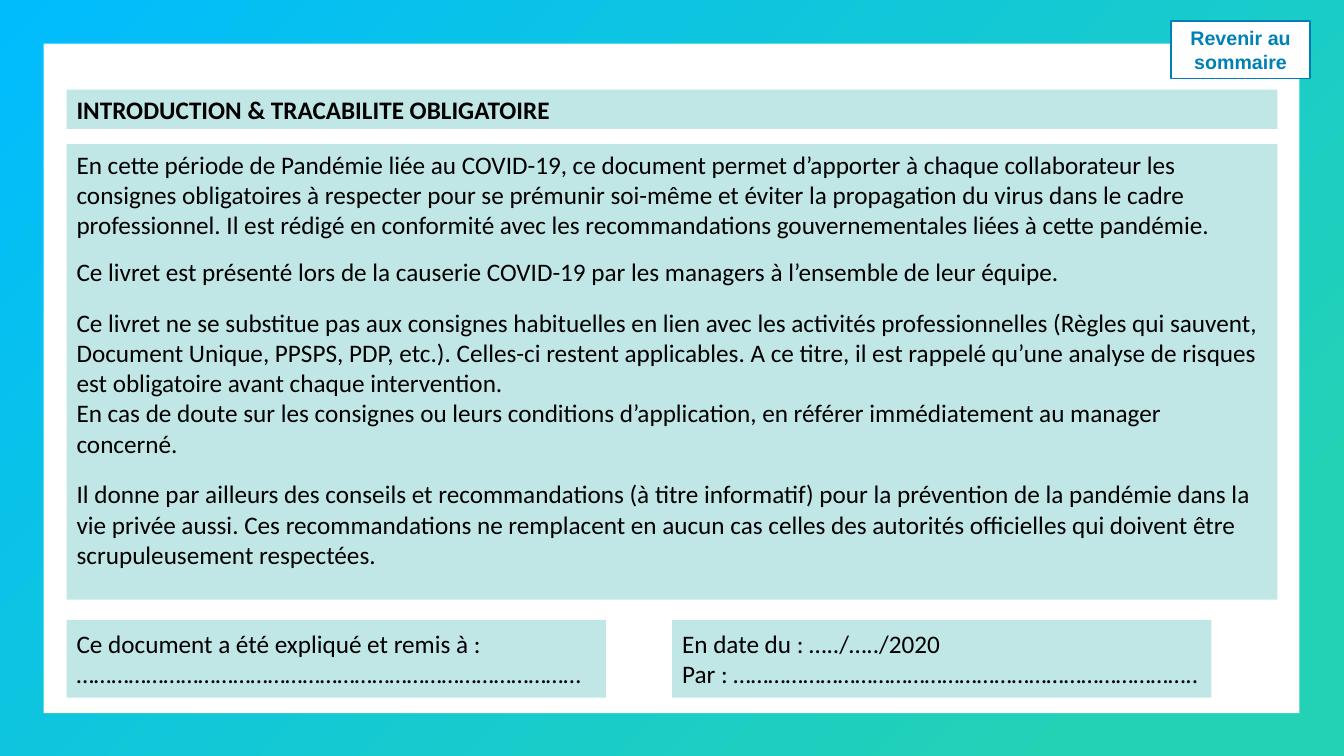
from pptx import Presentation
from pptx.dml.color import RGBColor
from pptx.enum.shapes import MSO_SHAPE
from pptx.enum.text import MSO_ANCHOR, PP_ALIGN
from pptx.oxml import parse_xml
from pptx.oxml.ns import nsdecls, qn
from pptx.util import Cm, Pt

WHITE = RGBColor(0xFF, 0xFF, 0xFF)
BLACK = RGBColor(0x00, 0x00, 0x00)
GREEN = RGBColor(0x23, 0xD2, 0xB5)
SKY = RGBColor(0x00, 0xBC, 0xFD)
PALE = RGBColor(0xC0, 0xE7, 0xE6)
BORDER = RGBColor(0x00, 0x7F, 0xB2)
LINK = RGBColor(0x00, 0x81, 0xB4)

WIDTH, HEIGHT = 33.87, 19.05
LEFT, FULL, HALF = 1.68, 30.51, 13.59

# Each paragraph with the space before it, in points
BODY = [
    ("En cette période de Pandémie liée au COVID-19, ce document permet d’apporter à chaque "
     "collaborateur les consignes obligatoires à respecter pour se prémunir soi-même et éviter "
     "la propagation du virus dans le cadre professionnel. Il est rédigé en conformité avec les "
     "recommandations gouvernementales liées à cette pandémie.", 0),
    ("Ce livret est présenté lors de la causerie COVID-19 par les managers à l’ensemble de leur "
     "équipe.", 12),
    ("Ce livret ne se substitue pas aux consignes habituelles en lien avec les activités "
     "professionnelles (Règles qui sauvent, Document Unique, PPSPS, PDP, etc.). Celles-ci "
     "restent applicables. A ce titre, il est rappelé qu’une analyse de risques est obligatoire "
     "avant chaque intervention.", 14.5),
    ("En cas de doute sur les consignes ou leurs conditions d’application, en référer "
     "immédiatement au manager concerné.", 0),
    ("Il donne par ailleurs des conseils et recommandations (à titre informatif) pour la "
     "prévention de la pandémie dans la vie privée aussi. Ces recommandations ne remplacent en "
     "aucun cas celles des autorités officielles qui doivent être scrupuleusement respectées.",
     14.5),
]
RECIPIENT = [
    ("Ce document a été expliqué et remis à :", 0),
    ("……………………………………………………………………………", 0),
]
SIGNATURE = [
    ("En date du : …../…../2020", 0),
    ("Par : ……………………………………………………………………..", 0),
]


def write(tf, paragraphs, size=18, font="Calibri", color=BLACK, bold=False,
          align=PP_ALIGN.LEFT, anchor=MSO_ANCHOR.MIDDLE):
    """Fill a text frame with (text, space before) pairs."""
    tf.word_wrap = True
    tf.vertical_anchor = anchor
    for i, (text, space) in enumerate(paragraphs):
        p = tf.paragraphs[0] if i == 0 else tf.add_paragraph()
        p.alignment = align
        if space:
            p.space_before = Pt(space)
        r = p.add_run()
        r.text = text
        r.font.name = font
        r.font.size = Pt(size)
        r.font.bold = bold
        r.font.color.rgb = color


class Builder:
    def __init__(self, slide):
        self.s = slide

    def rect(self, x, y, w, h, fill=WHITE, line=None):
        sp = self.s.shapes.add_shape(MSO_SHAPE.RECTANGLE, Cm(x), Cm(y), Cm(w), Cm(h))
        sp.shadow.inherit = False
        sp.fill.solid()
        sp.fill.fore_color.rgb = fill
        if line is None:
            sp.line.fill.background()
        else:
            sp.line.color.rgb = line
            sp.line.width = Pt(1)
        return sp

    def backdrop(self):
        """Cover the slide with a circular gradient centred at bottom right."""
        sp = self.rect(0, 0, WIDTH, HEIGHT)
        sp.fill.gradient()
        for stop, color, position in zip(sp.fill.gradient_stops, (GREEN, SKY), (0.13, 1)):
            stop.color.rgb = color
            stop.position = position
        grad = sp._element.spPr.find(qn("a:gradFill"))
        grad.replace(grad.find(qn("a:lin")), parse_xml(
            f'<a:path {nsdecls("a")} path="circle"><a:fillToRect l="100000" t="100000"/></a:path>'))

    def panel(self, x, y, w, h, paragraphs, **text_format):
        write(self.rect(x, y, w, h, PALE).text_frame, paragraphs, **text_format)

    def button(self, x, y, w, h, text):
        sp = self.rect(x, y, w, h, WHITE, BORDER)
        write(sp.text_frame, [(text, 0)], size=14, font="Arial", color=LINK, bold=True,
              align=PP_ALIGN.CENTER)


def main():
    prs = Presentation()
    prs.slide_width, prs.slide_height = Cm(WIDTH), Cm(HEIGHT)
    b = Builder(prs.slides.add_slide(prs.slide_layouts[6]))
    b.backdrop()
    b.rect(1.1, 1.1, 31.65, 16.87)
    b.button(29.51, 0.53, 3.51, 1.45, "Revenir au sommaire")
    b.panel(LEFT, 2.26, FULL, 0.99, [("INTRODUCTION & TRACABILITE OBLIGATOIRE", 0)], bold=True)
    b.panel(LEFT, 3.63, FULL, 11.48, BODY, anchor=MSO_ANCHOR.TOP)
    for x, lines in ((LEFT, RECIPIENT), (16.94, SIGNATURE)):
        b.panel(x, 15.62, HALF, 1.96, lines)
    prs.save("out.pptx")


if __name__ == "__main__":
    main()
